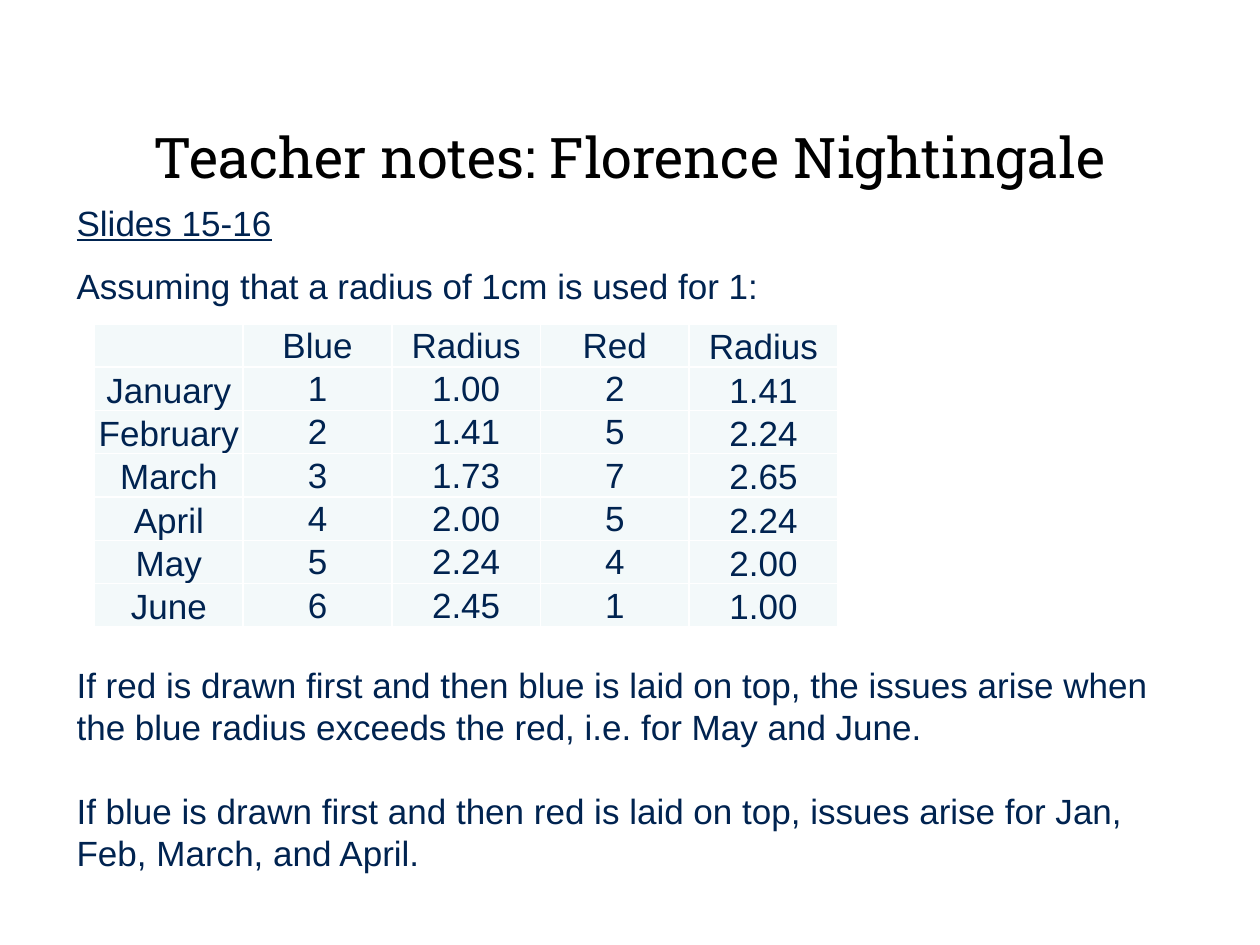
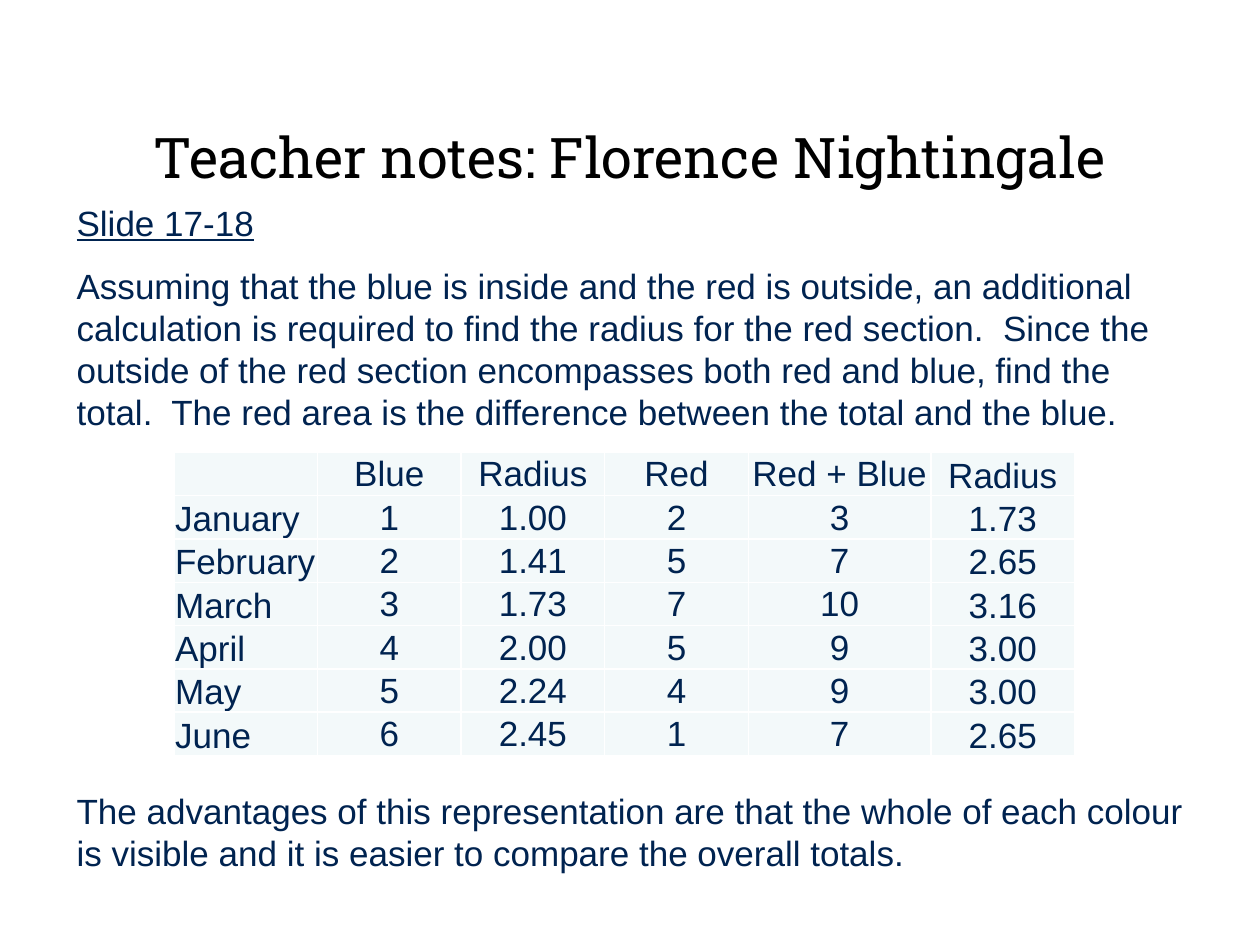
from dataclasses import dataclass
from math import sqrt

from lxml import etree
from pptx import Presentation
from pptx import util as u
from pptx.dml.color import RGBColor
from pptx.enum import text
from pptx.oxml import ns


@dataclass(frozen=True)
class Theme:
    background: str = "FFFFFF"
    title: str = "000000"
    body: str = "002350"
    cell: str = "F3F9FA"
    border: str = "FFFFFF"
    title_font: str = "Roboto Slab"
    body_font: str = "Arial"
    title_size: int = 32
    body_size: int = 20
    line_pitch: int = 24
    border_width: int = 1


MONTHS = ("January", "February", "March", "April", "May", "June")
BLUE = (1, 2, 3, 4, 5, 6)
RED = (2, 5, 7, 5, 4, 1)
TITLE = "Teacher notes: Florence Nightingale"
ROW_HEIGHT = 0.32
TABLE_GAP = 204


def radius(area):
    return f"{sqrt(area):.2f}"


class Deck:
    def __init__(self, theme):
        self.theme = theme
        self.presentation = Presentation()
        self.presentation.slide_width = u.Inches(10)
        self.presentation.slide_height = u.Inches(7.5)
        self.slide = None

    def add_slide(self, title):
        self.slide = self.presentation.slides.add_slide(self.presentation.slide_layouts[6])
        fill = self.slide.background.fill
        fill.solid()
        fill.fore_color.rgb = RGBColor.from_string(self.theme.background)
        frame = self.add_box(0.5, 0.92, 9, 0.64)
        frame.vertical_anchor = text.MSO_ANCHOR.MIDDLE
        frame.text = title
        paragraph = frame.paragraphs[0]
        paragraph.alignment = text.PP_ALIGN.CENTER
        self.format(paragraph, self.theme.title_font, self.theme.title_size, self.theme.title)

    def add_box(self, left, top, width, height):
        shape = self.slide.shapes.add_textbox(*map(u.Inches, (left, top, width, height)))
        shape.text_frame.word_wrap = True
        return shape.text_frame

    def format(self, paragraph, font, size, color, underline=None):
        for run in paragraph.runs:
            run.font.name = font
            run.font.size = u.Pt(size)
            run.font.color.rgb = RGBColor.from_string(color)
            run.font.underline = underline

    def format_body(self, paragraph, underline=None):
        theme = self.theme
        self.format(paragraph, theme.body_font, theme.body_size, theme.body, underline)

    def add_notes(self, heading, notes):
        frame = self.add_box(0.51, 1.55, 9, 5.75)
        frame.text = heading
        frame.paragraphs[0].line_spacing = u.Pt(self.theme.line_pitch)
        self.format_body(frame.paragraphs[0], underline=True)
        for space_before, note in notes:
            paragraph = frame.add_paragraph()
            paragraph.text = note
            paragraph.space_before = u.Pt(space_before)
            paragraph.line_spacing = u.Pt(self.theme.line_pitch)
            self.format_body(paragraph)

    def add_table(self, left, top, widths, heights, rows, month_alignment):
        shape = self.slide.shapes.add_table(
            len(rows), len(widths),
            *map(u.Inches, (left, top, sum(widths), sum(heights))))
        table = shape.table
        table.first_row = table.horz_banding = False
        for column, width in zip(table.columns, widths):
            column.width = u.Inches(width)
        for row, height in zip(table.rows, heights):
            row.height = u.Inches(height)
        for row_index, values in enumerate(rows):
            for column_index, value in enumerate(values):
                is_month = column_index == 0
                is_edge = is_month or column_index == len(widths) - 1
                self.fill_cell(
                    table.cell(row_index, column_index), str(value),
                    month_alignment if is_month else text.PP_ALIGN.CENTER,
                    text.MSO_ANCHOR.BOTTOM if is_edge else text.MSO_ANCHOR.MIDDLE)

    def fill_cell(self, cell, value, alignment, anchor):
        cell.margin_left = cell.margin_right = cell.margin_top = u.Inches(0.01)
        cell.margin_bottom = 0
        cell.vertical_anchor = anchor
        cell.text = value
        paragraph = cell.text_frame.paragraphs[0]
        paragraph.alignment = alignment
        self.format_body(paragraph)
        properties = cell._tc.get_or_add_tcPr()
        for side in ("lnL", "lnR", "lnT", "lnB"):
            line = etree.SubElement(properties, ns.qn(f"a:{side}"),
                                    w=str(u.Pt(self.theme.border_width)))
            fill = etree.SubElement(line, ns.qn("a:solidFill"))
            etree.SubElement(fill, ns.qn("a:srgbClr"), val=self.theme.border)
        cell.fill.solid()
        cell.fill.fore_color.rgb = RGBColor.from_string(self.theme.cell)


def add_overlaid_slide(deck):
    deck.add_slide(TITLE)
    deck.add_notes("Slides 15-16", [
        (12, "Assuming that a radius of 1cm is used for 1:"),
        (TABLE_GAP, "If red is drawn first and then blue is laid on top, the issues arise "
                    "when the blue radius exceeds the red, i.e. for May and June."),
        (24, "If blue is drawn first and then red is laid on top, issues arise for Jan, "
             "Feb, March, and April."),
    ])
    rows = [("", "Blue", "Radius", "Red", "Radius")]
    rows += [(month, blue, radius(blue), red, radius(red))
             for month, blue, red in zip(MONTHS, BLUE, RED)]
    heights = [0.34 if row[0] == "February" else ROW_HEIGHT for row in rows]
    deck.add_table(0.75, 2.57, [1.18] * 5, heights, rows, text.PP_ALIGN.CENTER)


def add_stacked_slide(deck):
    deck.add_slide(TITLE)
    deck.add_notes("Slide 17-18", [
        (12, "Assuming that the blue is inside and the red is outside, an additional "
             "calculation is required to find the radius for the red section.  Since the "
             "outside of the red section encompasses both red and blue, find the total.  "
             "The red area is the difference between the total and the blue."),
        (TABLE_GAP, "The advantages of this representation are that the whole of each colour "
                    "is visible and it is easier to compare the overall totals."),
    ])
    rows = [("", "Blue", "Radius", "Red", "Red + Blue", "Radius")]
    rows += [(month, blue, radius(blue), red, red + blue, radius(red + blue))
             for month, blue, red in zip(MONTHS, BLUE, RED)]
    widths = [1.14] * 4 + [1.45, 1.14]
    deck.add_table(1.38, 3.59, widths, [ROW_HEIGHT] * len(rows), rows, text.PP_ALIGN.LEFT)


def main():
    deck = Deck(Theme())
    add_overlaid_slide(deck)
    add_stacked_slide(deck)
    deck.presentation.save("out.pptx")


if __name__ == "__main__":
    main()
